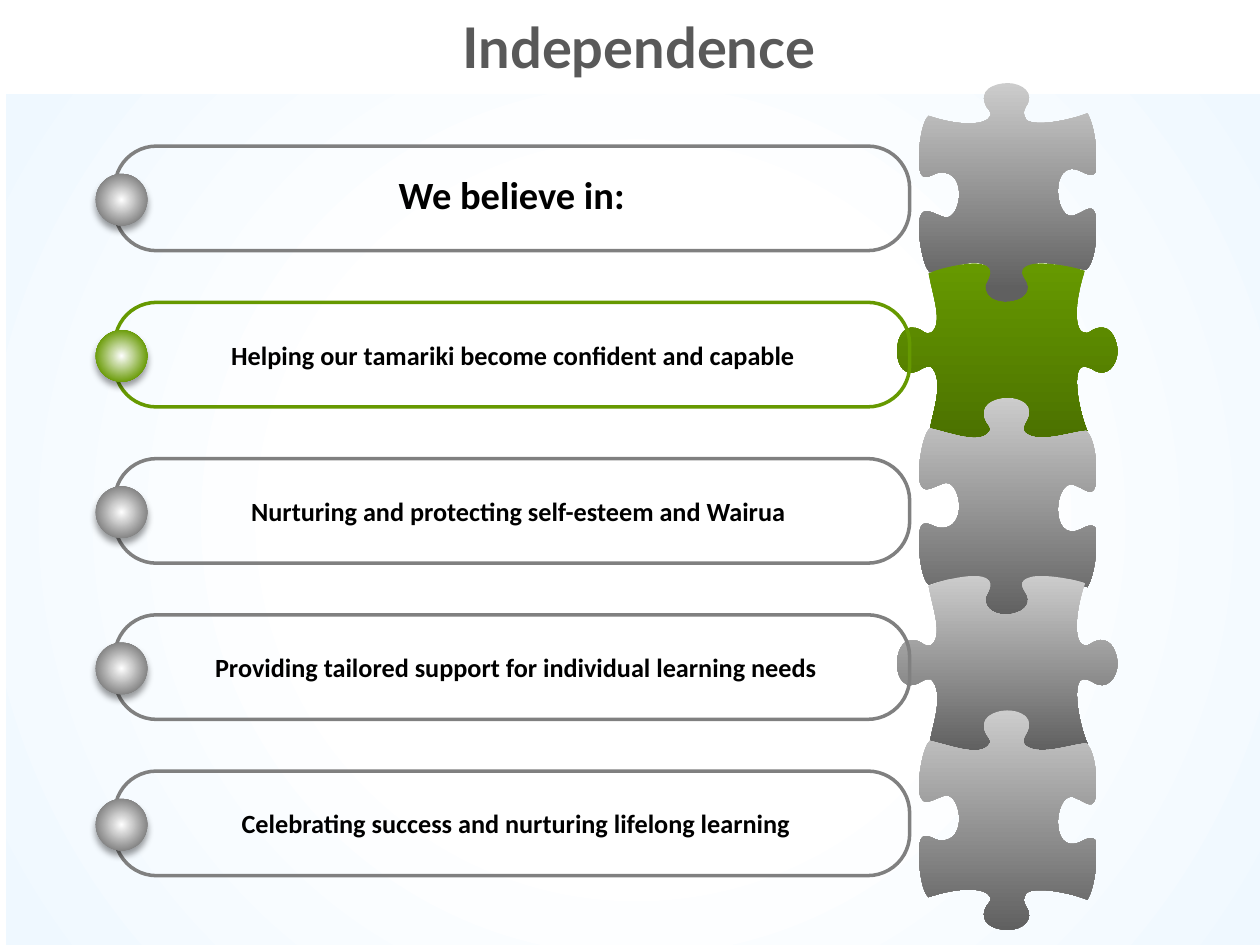
from lxml import etree
from pptx import Presentation
from pptx import util as u
from pptx.dml.color import RGBColor
from pptx.enum import shapes, text
from pptx.oxml import ns

PX = u.Inches(1) // 100
SLIDE = (1000, 750)
GRAY, GREEN = "808080", "669900"

TITLE = ("Independence ", (25, 5, 975, 64))
HEADING = "We believe in: "
ROWS = [
    (HEADING, GRAY, (295, 15, 229, 81)),
    ("Helping our tamariki become confident and capable ", GREEN, (119, 24, 581, 35)),
    ("Nurturing and protecting self-esteem and Wairua", GRAY, (121, 24, 581, 35)),
    ("Providing tailored support for individual learning needs", GRAY, (119, 24, 581, 35)),
    ("Celebrating success and nurturing lifelong learning", GRAY, (119, 24, 581, 35)),
]
ROW_TOP, ROW_STEP = 116, 124
TITLE_FONT = {"name": "Lato", "size": u.Pt(32), "bold": True}
HEADING_FONT = {"name": "Calibri", "size": u.Pt(22), "bold": True}
ROW_FONT = {"name": "Calibri", "size": u.Pt(15), "bold": True}

BACKDROP_STOPS = [(0, "FFFFFF"), (43, "FFFFFF"), (100, "EFF8FF")]
GRAY_STOPS = [(0, "CCCCCC"), (94, "606060"), (100, "606060")]
LIGHT_STOPS = [(0, "CCCCCC"), (100, "606060")]
GREEN_STOPS = [(0, GREEN), (100, "4C7200")]

TALL_SIZE, WIDE_SIZE = (141, 174), (175, 139)
TALL = [
    (71, 174), (82, 174), (93, 166), (85, 155), (84, 153), (83, 151), (84, 148),
    (84, 138), (116, 143), (134, 150), (140, 140), (142, 118), (141, 109),
    (142, 101), (138, 99), (129, 104), (102, 117), (108, 58), (126, 70),
    (132, 72), (140, 81), (141, 65), (142, 60), (141, 32), (133, 26),
    (120, 27), (94, 37), (84, 27), (83, 25), (83, 22), (85, 19),
    (101, -7), (40, -6), (54, 19), (57, 23), (58, 25), (56, 27),
    (49, 37), (26, 28), (9, 24), (3, 29), (0, 54), (0, 61),
    (2, 78), (8, 72), (19, 68), (33, 61), (41, 105), (17, 103),
    (12, 103), (3, 94), (1, 105), (-1, 112), (1, 142), (8, 148),
    (35, 139), (54, 141), (57, 148), (58, 149), (57, 152), (54, 155),
    (47, 168), (59, 174), (71, 174),
]
TALL_FLIPPED = [(x, TALL_SIZE[1] - y) for x, y in TALL]
WIDE = [
    (175, 69), (175, 81), (166, 92), (155, 84), (153, 83), (151, 82), (148, 82),
    (138, 82), (144, 117), (151, 133), (142, 134), (121, 140), (111, 139),
    (105, 138), (96, 134), (102, 126), (116, 100), (62, 101), (70, 123),
    (74, 131), (79, 135), (64, 139), (57, 140), (35, 133), (26, 132),
    (28, 119), (38, 93), (27, 82), (25, 81), (23, 82), (19, 84),
    (-7, 100), (-6, 39), (19, 53), (23, 56), (25, 56), (27, 55),
    (37, 48), (28, 25), (25, 8), (33, 4), (52, 0), (62, 0),
    (79, 1), (74, 10), (70, 17), (68, 38), (111, 33), (103, 15),
    (100, 10), (95, 4), (106, 1), (116, -2), (142, 3), (149, 6),
    (140, 33), (141, 53), (148, 55), (150, 56), (152, 55), (155, 53),
    (168, 46), (174, 58), (175, 69),
]
PIECES = [
    (TALL_FLIPPED, (729, 66, *TALL_SIZE), GRAY_STOPS),
    (WIDE, (712, 209, *WIDE_SIZE), GREEN_STOPS),
    (TALL, (729, 316, *TALL_SIZE), LIGHT_STOPS),
    (WIDE, (712, 457, *WIDE_SIZE), LIGHT_STOPS),
    (TALL, (729, 564, *TALL_SIZE), LIGHT_STOPS),
]


def color(hex_value):
    return RGBColor.from_string(hex_value)


def emu(*lengths):
    return [length * PX for length in lengths]


def child(parent, tag, **attributes):
    return etree.SubElement(parent, ns.qn(tag), {k: str(v) for k, v in attributes.items()})


def fill_gradient(shape, stops, radial=False):
    shape.fill.gradient()
    gradient = shape.element.spPr.find(ns.qn("a:gradFill"))
    for part in list(gradient):
        gradient.remove(part)
    stop_list = child(gradient, "a:gsLst")
    for position, hex_value in stops:
        child(child(stop_list, "a:gs", pos=position * 1000), "a:srgbClr", val=hex_value)
    if radial:
        focus = child(gradient, "a:path", path="circle")
        child(focus, "a:fillToRect", l=50000, t=50000, r=50000, b=50000)
    else:
        child(gradient, "a:lin", ang=5400000, scaled=0)


def add_preset(parent, kind, box):
    shape = parent.add_shape(kind, *emu(*box))
    shape.shadow.inherit = False
    shape.line.fill.background()
    return shape


def add_label(parent, words, box, font, hex_value):
    label = parent.add_textbox(*emu(*box))
    frame = label.text_frame
    frame.word_wrap = True
    frame.auto_size = text.MSO_AUTO_SIZE.SHAPE_TO_FIT_TEXT
    paragraph = frame.paragraphs[0]
    paragraph.alignment = text.PP_ALIGN.CENTER
    run = paragraph.add_run()
    run.text = words
    for attribute, value in font.items():
        setattr(run.font, attribute, value)
    run.font.color.rgb = color(hex_value)


def curve_outline(piece, outline, size):
    contour = next(piece.element.iter(ns.qn("a:path")))
    for part in list(contour):
        contour.remove(part)
    for side, length in zip("wh", emu(*size)):
        contour.set(side, str(length))
    steps = [("a:moveTo", outline[:1])]
    steps += [("a:cubicBezTo", outline[i:i + 3]) for i in range(1, len(outline), 3)]
    for tag, points in steps:
        step = child(contour, tag)
        for x, y in points:
            child(step, "a:pt", x=x * PX, y=y * PX)
    child(contour, "a:close")


def add_piece(parent, outline, box, stops):
    left, top, width, height = box
    builder = parent.build_freeform(left, top, scale=PX)
    builder.add_line_segments([(left + width, top), (left + width, top + height)])
    piece = builder.convert_to_shape()
    curve_outline(piece, outline, (width, height))
    piece.left, piece.top, piece.width, piece.height = emu(*box)
    piece.shadow.inherit = False
    piece.line.fill.background()
    fill_gradient(piece, stops)


def add_row(parent, top, words, hex_value, label_box):
    frame = add_preset(parent, shapes.MSO_SHAPE.ROUNDED_RECTANGLE, (91, top, 631, 83))
    frame.adjustments[0] = 0.4
    frame.fill.background()
    frame.line.color.rgb = color(hex_value)
    frame.line.width = u.Pt(2)

    bead = add_preset(parent, shapes.MSO_SHAPE.OVAL, (76, top + 22, 41, 41))
    fill_gradient(bead, [(0, "FFFFFF"), (75, hex_value), (100, hex_value)], radial=True)
    effects = bead.element.spPr.find(ns.qn("a:effectLst"))
    shadow = child(effects, "a:outerShdw", blurRad=u.Pt(4), dist=u.Pt(3), dir=5400000, rotWithShape=0)
    child(child(shadow, "a:srgbClr", val="000000"), "a:alpha", val=40000)

    left, offset, width, height = label_box
    font = HEADING_FONT if words == HEADING else ROW_FONT
    add_label(parent, words, (left, top + offset, width, height), font, "000000")


def main():
    deck = Presentation()
    deck.slide_width, deck.slide_height = emu(*SLIDE)
    canvas = deck.slides.add_slide(deck.slide_layouts[6]).shapes

    backdrop = add_preset(canvas, shapes.MSO_SHAPE.RECTANGLE, (5, 75, 1000, 676))
    fill_gradient(backdrop, BACKDROP_STOPS, radial=True)

    puzzle = canvas.add_group_shape().shapes
    for piece in PIECES:
        add_piece(puzzle, *piece)

    add_label(canvas, *TITLE, TITLE_FONT, "595959")
    for i, row in enumerate(ROWS):
        add_row(canvas.add_group_shape().shapes, ROW_TOP + i * ROW_STEP, *row)

    deck.save("out.pptx")


if __name__ == "__main__":
    main()
